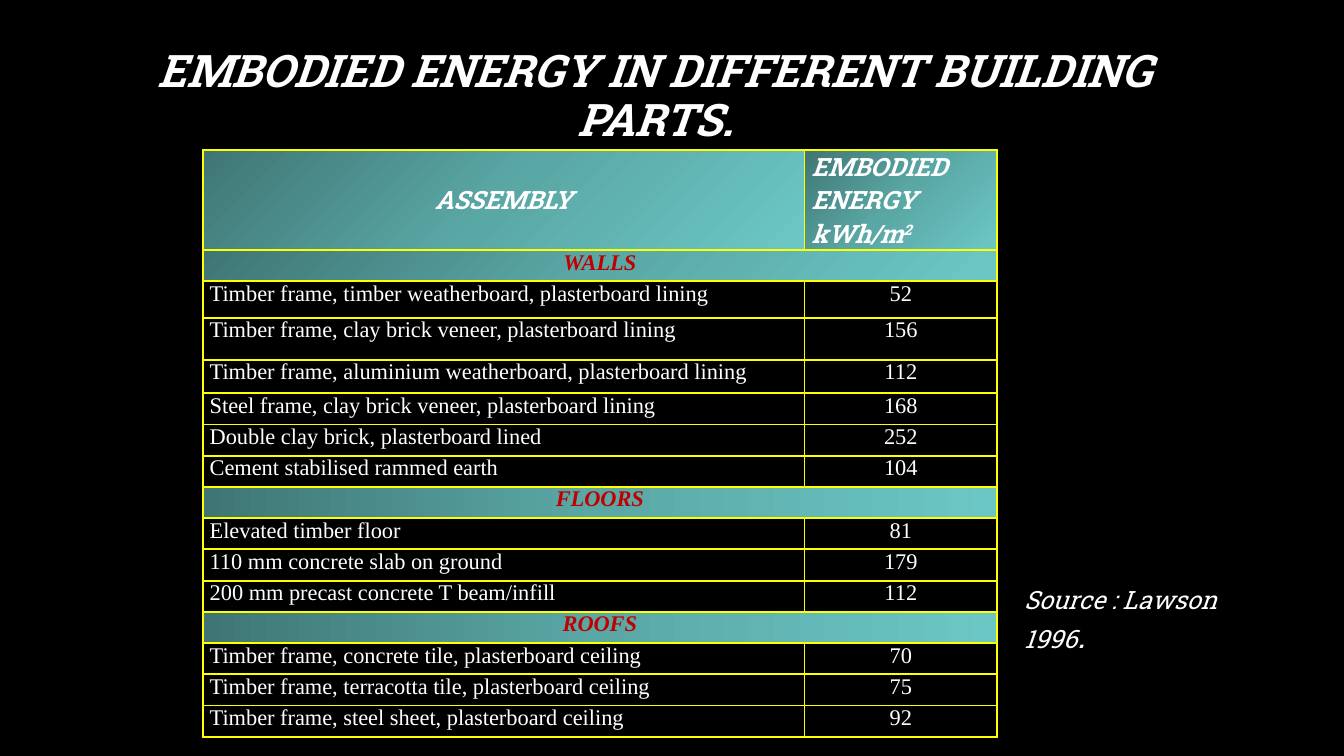
from lxml.etree import SubElement
from pptx import Presentation
from pptx.dml.color import RGBColor
from pptx.enum.text import MSO_ANCHOR, PP_ALIGN
from pptx.oxml.ns import qn
from pptx.util import Inches, Pt

COLORS = {
    "background": "000000", "text": "FFFFFF", "group": "C00000", "border": "FFFF00",
    "dark": "3F7675", "middle": "5AA8A6", "light": "6BC7C5",
}
DISPLAY, BODY = "Roboto Slab", "Times New Roman"
COLUMN_WIDTHS = (5.97, 1.91)
HEADER_HEIGHT, ROW_HEIGHT = 0.99, 0.31
TALLER_ROWS = {2: 0.36, 3: 0.42, 4: 0.33}

# Each group: name, gradient angle, assemblies with their energy
GROUPS = [
    ("WALLS", 45, [
        ("Timber frame, timber weatherboard, plasterboard lining", 52),
        ("Timber frame, clay brick veneer, plasterboard lining", 156),
        ("Timber frame, aluminium weatherboard, plasterboard lining", 112),
        ("Steel frame, clay brick veneer, plasterboard lining", 168),
        ("Double clay brick, plasterboard lined", 252),
        ("Cement stabilised rammed earth", 104),
    ]),
    ("FLOORS", 0, [
        ("Elevated timber floor", 81),
        ("110 mm concrete slab on ground", 179),
        ("200 mm precast concrete T beam/infill", 112),
    ]),
    ("ROOFS", 0, [
        ("Timber frame, concrete tile, plasterboard ceiling", 70),
        ("Timber frame, terracotta tile, plasterboard ceiling", 75),
        ("Timber frame, steel sheet, plasterboard ceiling", 92),
    ]),
]


def add_text(paragraph, text, size=16, font=BODY, color="text", bold=False,
             italic=False, align=PP_ALIGN.LEFT, baseline=None):
    paragraph.alignment = align
    run = paragraph.add_run()
    run.text = text
    run.font.size, run.font.name = Pt(size), font
    run.font.bold, run.font.italic = bold, italic
    run.font.color.rgb = RGBColor.from_string(COLORS[color])
    if baseline:
        run.font._element.set("baseline", str(baseline * 1000))


def add_solid(parent, color):
    SubElement(SubElement(parent, qn("a:solidFill")), qn("a:srgbClr"), val=COLORS[color])


def format_cell(cell, angle=None):
    """Yellow borders; a teal gradient when an angle is given."""
    cell.margin_left = cell.margin_right = Inches(0.07)
    cell.margin_top = cell.margin_bottom = 0
    properties = cell._tc.get_or_add_tcPr()
    for side in ("lnL", "lnR", "lnT", "lnB"):
        add_solid(SubElement(properties, qn(f"a:{side}"), w=str(Pt(1.5))), "border")
    if angle is None:
        cell.fill.background()
        return
    gradient = SubElement(properties, qn("a:gradFill"), rotWithShape="1")
    stops = SubElement(gradient, qn("a:gsLst"))
    for share, color in ((0, "dark"), (50, "middle"), (100, "light")):
        stop = SubElement(stops, qn("a:gs"), pos=str(share * 1000))
        SubElement(stop, qn("a:srgbClr"), val=COLORS[color])
    SubElement(gradient, qn("a:lin"), ang=str(angle * 60000), scaled="0")


def place_title(slide, left, top, width, height):
    title = slide.shapes.title
    title.left, title.top, title.width, title.height = map(Inches, (left, top, width, height))
    title.text_frame.vertical_anchor = MSO_ANCHOR.MIDDLE
    heading = title.text_frame.paragraphs[0]
    heading.line_spacing = 0.9
    add_text(heading, "EMBODIED ENERGY IN DIFFERENT BUILDING PARTS.", size=32,
             font=DISPLAY, bold=True, italic=True, align=PP_ALIGN.CENTER)


def fill_header(assembly, energy):
    style = dict(size=18, font=DISPLAY, bold=True, italic=True)
    for cell in (assembly, energy):
        format_cell(cell, angle=45)
    assembly.vertical_anchor = MSO_ANCHOR.MIDDLE
    add_text(assembly.text_frame.paragraphs[0], "ASSEMBLY", align=PP_ALIGN.CENTER, **style)
    add_text(energy.text_frame.paragraphs[0], "EMBODIED", **style)
    unit = energy.text_frame.add_paragraph()
    add_text(unit, "ENERGY kWh/m", **style)
    add_text(unit, "2", baseline=30, **style)


def place_energy_table(slide, left, top):
    row_count = 1 + sum(1 + len(assemblies) for _, _, assemblies in GROUPS)
    heights = [HEADER_HEIGHT] + [TALLER_ROWS.get(i, ROW_HEIGHT) for i in range(1, row_count)]
    table = slide.shapes.add_table(
        row_count, len(COLUMN_WIDTHS), Inches(left), Inches(top),
        Inches(sum(COLUMN_WIDTHS)), Inches(sum(heights))).table
    table.first_row = table.horz_banding = False
    for column, width in zip(table.columns, COLUMN_WIDTHS):
        column.width = Inches(width)
    for row, height in zip(table.rows, heights):
        row.height = Inches(height)

    fill_header(table.cell(0, 0), table.cell(0, 1))
    row = 1
    for group, angle, assemblies in GROUPS:
        # Group band across both columns
        band, covered = table.cell(row, 0), table.cell(row, 1)
        band.merge(covered)
        for cell in (band, covered):
            format_cell(cell, angle)
        add_text(band.text_frame.paragraphs[0], group, color="group", bold=True,
                 italic=True, align=PP_ALIGN.CENTER)
        # Assemblies of the group
        for row, values in enumerate(assemblies, row + 1):
            for column, (value, align) in enumerate(zip(values, (PP_ALIGN.LEFT, PP_ALIGN.CENTER))):
                cell = table.cell(row, column)
                format_cell(cell)
                add_text(cell.text_frame.paragraphs[0], str(value), align=align)
        row += 1


def place_source(slide, left, top, width, height):
    source = slide.shapes.add_textbox(*map(Inches, (left, top, width, height)))
    source.text_frame.word_wrap = True
    citation = source.text_frame.paragraphs[0]
    add_text(citation, "Source : Lawson 1996", size=18, font=DISPLAY, italic=True)
    add_text(citation, ".", size=24, font=DISPLAY, italic=True)


def main():
    deck = Presentation()
    deck.slide_width, deck.slide_height = Inches(13.33), Inches(7.5)
    slide = deck.slides.add_slide(deck.slide_layouts[5])
    slide.background.fill.solid()
    slide.background.fill.fore_color.rgb = RGBColor.from_string(COLORS["background"])
    place_title(slide, 0.84, 0.24, 11.32, 1.45)
    place_energy_table(slide, 2.01, 1.49)
    place_source(slide, 10.06, 5.75, 2.67, 0.5)
    deck.save("out.pptx")


if __name__ == "__main__":
    main()
